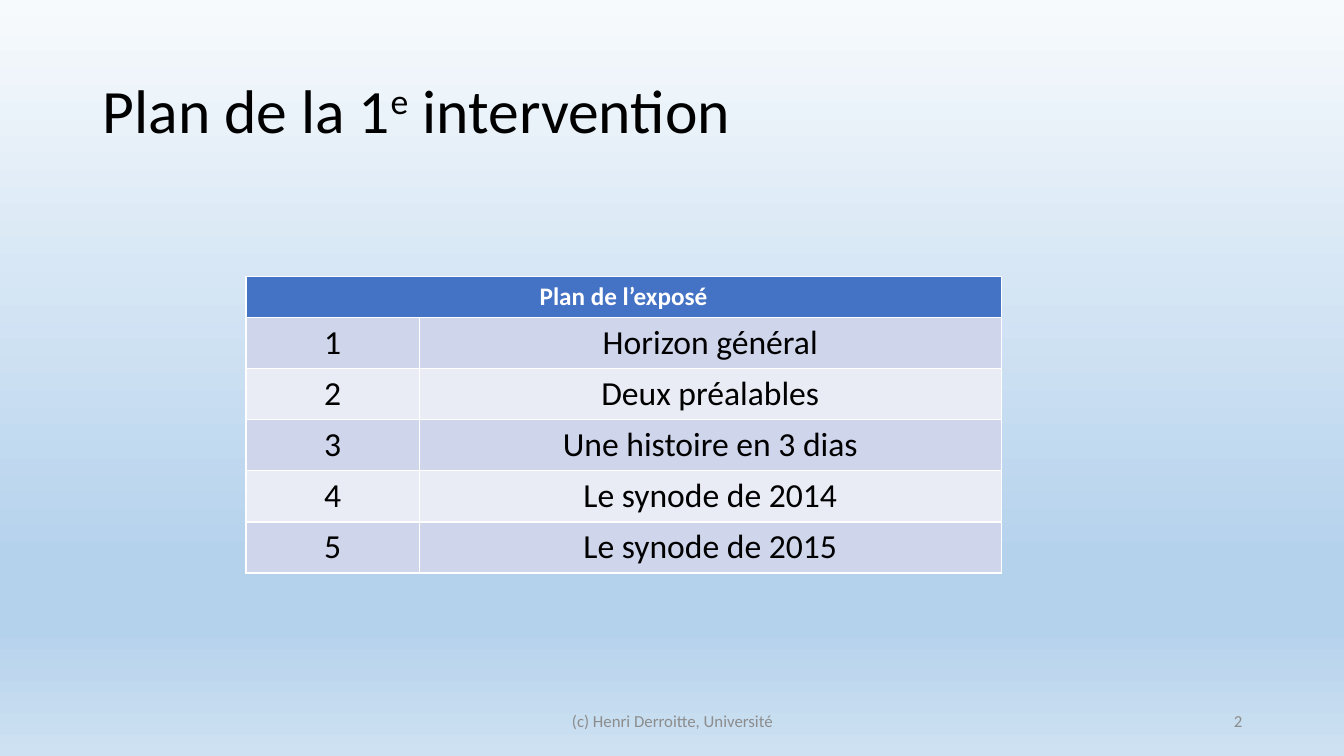
from copy import deepcopy
from pptx import Presentation
from pptx.dml.color import RGBColor
from pptx.enum.text import MSO_ANCHOR as Anchor, PP_ALIGN as Align
from pptx.oxml.ns import qn
from pptx.util import Inches, Pt

# Content
TITLE = [("Plan de la 1", False), ("e", True), (" intervention", False)]
HEAD = "Plan de l’exposé"
TOPICS = ["Horizon général", "Deux préalables", "Une histoire en 3 dias",
          "Le synode de 2014", "Le synode de 2015"]
FOOT = [("(c) Henri Derroitte, Université", 4.42, 4.5, Align.CENTER),
        ("2", 9.42, 3, Align.RIGHT)]

# Formats
SKY = [(0, "F7FAFD"), (0.74, "B5D2EC"), (0.83, "B5D2EC"), (1, "CEE1F2")]
BANDS = ["CFD5EA", "E9EBF5"]
BLUE = "4472C4"
BIG = {"size": Pt(44), "color": "000000"}
TOP = {"size": Pt(18), "color": "FFFFFF", "bold": True}
BODY = {"size": Pt(24), "color": "000000", "bold": False}
SMALL = {"size": Pt(12), "color": "8C8C8C"}

# Grid in inches
WIDE, HIGH = 13.33, 7.5
LEFT, UP = 2.44, 2.74
COLS = [1.72, 5.77]
ROWS = [0.41] + [0.5] * len(TOPICS)


def tint(code):
    return RGBColor.from_string(code)


def place(shape, *box):
    for name, value in zip(("left", "top", "width", "height"), box):
        setattr(shape, name, Inches(value))


def write(para, text, style):
    run = para.add_run()
    run.text = text
    run.font.name = "Calibri"
    for name, value in style.items():
        if name == "color":
            run.font.color.rgb = tint(value)
        else:
            setattr(run.font, name, value)
    return run


def fill_cell(cell, text, style, color):
    cell.fill.solid()
    cell.fill.fore_color.rgb = tint(color)
    para = cell.text_frame.paragraphs[0]
    para.alignment = Align.CENTER
    write(para, text, style)


def paint(slide):
    fill = slide.background.fill
    fill.gradient()
    fill.gradient_angle = 270
    stops = slide.element.find(".//" + qn("a:gsLst"))
    for _ in SKY[2:]:
        stops.append(deepcopy(stops[0]))
    for stop, (spot, color) in zip(fill.gradient_stops, SKY):
        stop.position = spot
        stop.color.rgb = tint(color)


def main():
    prs = Presentation()
    prs.slide_width, prs.slide_height = Inches(WIDE), Inches(HIGH)
    slide = prs.slides.add_slide(prs.slide_layouts[5])
    paint(slide)

    # Title
    title = slide.shapes.title
    place(title, 0.92, 0.4, 11.5, 1.45)
    title.text_frame.vertical_anchor = Anchor.MIDDLE
    para = title.text_frame.paragraphs[0]
    para.alignment = Align.LEFT
    para.line_spacing = 0.9
    for text, raised in TITLE:
        run = write(para, text, BIG)
        if raised:
            run.font._element.set("baseline", "30000")

    # Table of topics
    box = [Inches(n) for n in (LEFT, UP, sum(COLS), sum(ROWS))]
    table = slide.shapes.add_table(len(ROWS), len(COLS), *box).table
    for col, width in zip(table.columns, COLS):
        col.width = Inches(width)
    for row, height in zip(table.rows, ROWS):
        row.height = Inches(height)
    table.cell(0, 0).merge(table.cell(0, 1))
    fill_cell(table.cell(0, 0), HEAD, TOP, BLUE)
    for num, topic in enumerate(TOPICS, 1):
        for col, text in enumerate((str(num), topic)):
            fill_cell(table.cell(num, col), text, BODY, BANDS[(num - 1) % 2])

    # Footer
    for text, left, width, align in FOOT:
        note = slide.shapes.add_textbox(0, 0, 0, 0)
        place(note, left, 6.95, width, 0.4)
        frame = note.text_frame
        frame.word_wrap = True
        frame.vertical_anchor = Anchor.MIDDLE
        frame.paragraphs[0].alignment = align
        write(frame.paragraphs[0], text, SMALL)

    prs.save("out.pptx")


if __name__ == "__main__":
    main()
